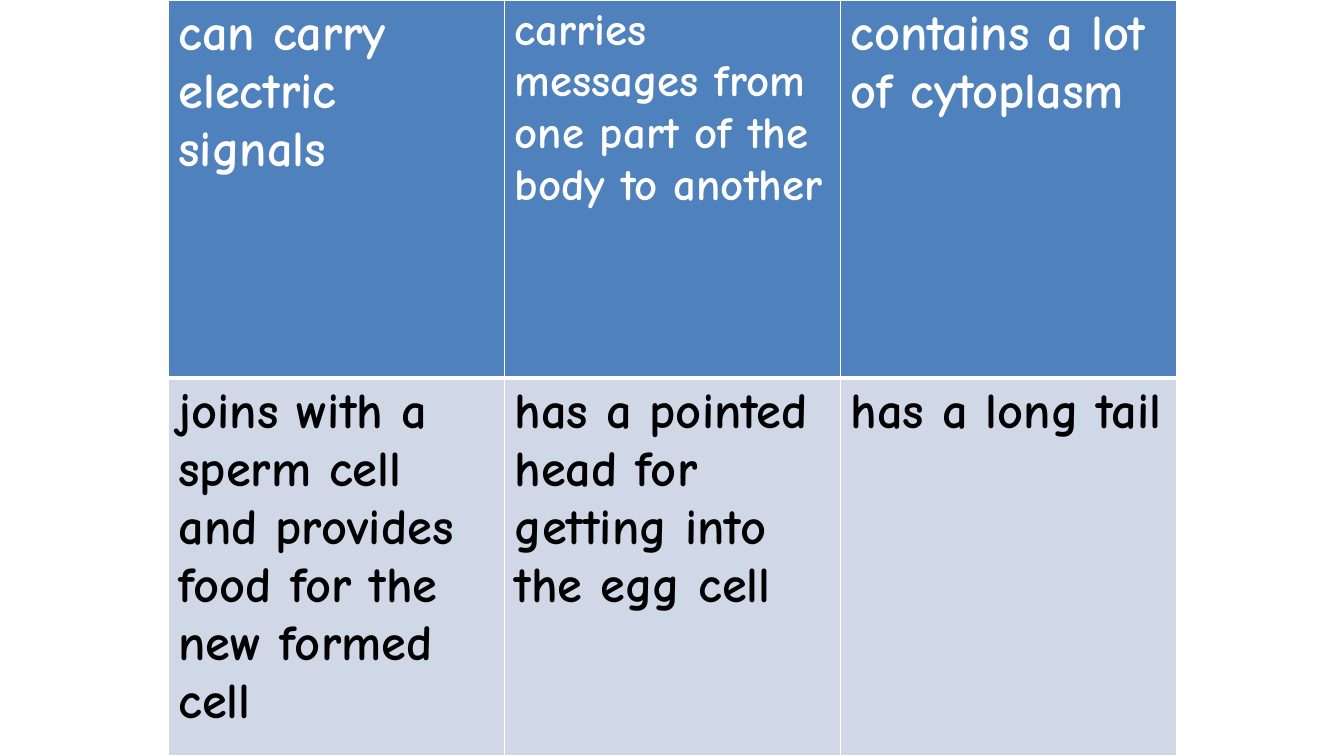
from pptx import Presentation
from pptx.dml.color import RGBColor
from pptx.oxml.ns import qn
from pptx.util import Inches, Pt
from lxml import etree

WHITE = RGBColor(0xFF, 0xFF, 0xFF)
BLACK = RGBColor(0, 0, 0)
BLUE = RGBColor(0x4F, 0x81, 0xBD)
PALE = RGBColor(0xD0, 0xD8, 0xE8)
FONT = "Comic Neue"

ROWS = [
    (BLUE, WHITE, 3, [
        ("can carry electric signals", 36),
        ("carries\nmessages from one part of the body to another", 32),
        ("contains a lot of cytoplasm", 36),
    ]),
    (PALE, BLACK, 1, [
        ("joins with a sperm cell and provides food for the new formed cell", 36),
        ("has a pointed head for getting into the egg cell", 36),
        ("has a long tail", 36),
    ]),
]


def add_edge(cell, side, width):
    props = cell._tc.get_or_add_tcPr()
    line = etree.SubElement(props, qn("a:ln" + side), w=str(Pt(width)))
    fill = etree.SubElement(line, qn("a:solidFill"))
    etree.SubElement(fill, qn("a:srgbClr"), val=str(WHITE))


def fill_cell(cell, text, size, back, ink, base):
    for side, width in (("L", 1), ("R", 1), ("T", 1), ("B", base)):
        add_edge(cell, side, width)
    cell.fill.solid()
    cell.fill.fore_color.rgb = back
    cell.text_frame.text = text
    for para in cell.text_frame.paragraphs:
        for run in para.runs:
            font = run.font
            font.name = FONT
            font.size = Pt(size)
            font.bold = True
            font.color.rgb = ink


def add_cards(slide):
    frame = slide.shapes.add_table(
        2, 3, Inches(1.67), Inches(0), Inches(10), Inches(7.5))
    table = frame.table
    for r, (back, ink, base, cards) in enumerate(ROWS):
        for c, (text, size) in enumerate(cards):
            fill_cell(table.cell(r, c), text, size, back, ink, base)


def main():
    deck = Presentation()
    deck.slide_width = Inches(13.33)
    deck.slide_height = Inches(7.5)
    add_cards(deck.slides.add_slide(deck.slide_layouts[6]))
    deck.save("out.pptx")


if __name__ == "__main__":
    main()
